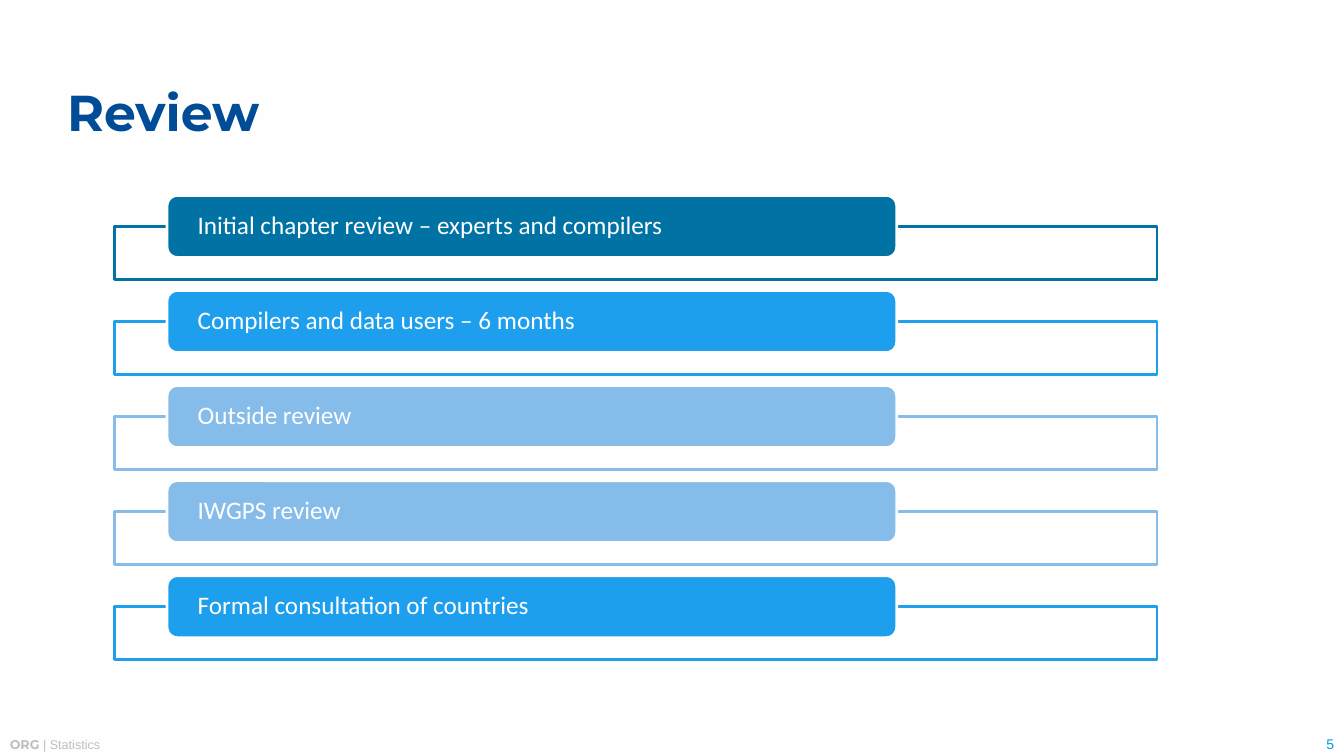
"""Build the Review slide: five review stages as labelled frames."""
from lxml import etree
from pptx import Presentation
from pptx.dml.color import RGBColor
from pptx.enum import shapes, text
from pptx.oxml import ns
from pptx.util import Pt

COLORS = {"paper": "FEFEFE", "navy": "004C97", "deep": "0073A4", "bright": "1D9FED",
          "pale": "85BCEA", "gray": "BEBEBE", "cyan": "009CDE"}
TITLE = [("Review", "Montserrat", 36, "navy", True)]
FOOTER = [("ORG ", "Montserrat", 9, "gray", True),
          ("| Statistics", "Arial", 9, "gray", False)]
NUMBER = [("5", "Arial", 10, "cyan", False)]
STAGES = [
    ("Initial chapter review – experts and compilers", "deep"),
    ("Compilers and data users – 6 months", "bright"),
    ("Outside review", "pale"),
    ("IWGPS review", "pale"),
    ("Formal consultation of countries", "bright"),
]
TOP, PITCH, DROP = 139.6, 67.9, 22.2


def rgb(name):
    return RGBColor.from_string(COLORS[name])


def write(shape, runs, inset, anchor, align=text.PP_ALIGN.LEFT, space=1):
    frame = shape.text_frame
    frame.word_wrap = True
    frame.vertical_anchor = anchor
    frame.margin_left = frame.margin_right = Pt(inset[0])
    frame.margin_top = frame.margin_bottom = Pt(inset[1])
    para = frame.paragraphs[0]
    para.alignment, para.line_spacing = align, space
    for words, face, size, color, bold in runs:
        run = para.add_run()
        run.text = words
        run.font.name, run.font.size, run.font.bold = face, Pt(size), bold
        run.font.color.rgb = rgb(color)


def label(slide, box, *style):
    write(slide.shapes.add_textbox(*map(Pt, box)), *style)


def block(slide, kind, box, fill, line):
    shape = slide.shapes.add_shape(kind, *map(Pt, box))
    shape.shadow.inherit = False
    shape.fill.solid()
    shape.fill.fore_color.rgb = rgb(fill)
    shape.line.color.rgb = rgb(line)
    shape.line.width = Pt(2)
    return shape


def fade(shape, percent):
    color = shape.fill._xPr.find(ns.qn("a:solidFill"))[0]
    etree.SubElement(color, ns.qn("a:alpha")).set("val", str(percent * 1000))


def main():
    deck = Presentation()
    deck.slide_width, deck.slide_height = Pt(960), Pt(540)
    slide = deck.slides.add_slide(deck.slide_layouts[6])
    slide.background.fill.solid()
    slide.background.fill.fore_color.rgb = rgb("paper")
    anchor, align = text.MSO_ANCHOR, text.PP_ALIGN
    label(slide, (0, 522.7, 720, 18), FOOTER, (7.2, 3.6), anchor.TOP)
    label(slide, (864.7, 521.3, 95.3, 19.4), NUMBER, (7.2, 3.6), anchor.BOTTOM, align.RIGHT)
    label(slide, (48, 38.2, 864, 87.8), TITLE, (0, 0), anchor.MIDDLE, align.LEFT, 0.9)
    kinds = shapes.MSO_SHAPE
    for row, (words, color) in enumerate(STAGES):
        top = TOP + row * PITCH
        frame = block(slide, kinds.RECTANGLE, (82, top + DROP, 744.5, 37.8), "paper", color)
        fade(frame, 90)
        bar = block(slide, kinds.ROUNDED_RECTANGLE, (119.3, top, 521.2, 44.3), color, "paper")
        write(bar, [(words, "Calibri", 18, "paper", False)], (19.7, 0), anchor.MIDDLE,
              align.LEFT, 0.9)
    deck.save("out.pptx")


if __name__ == "__main__":
    main()
